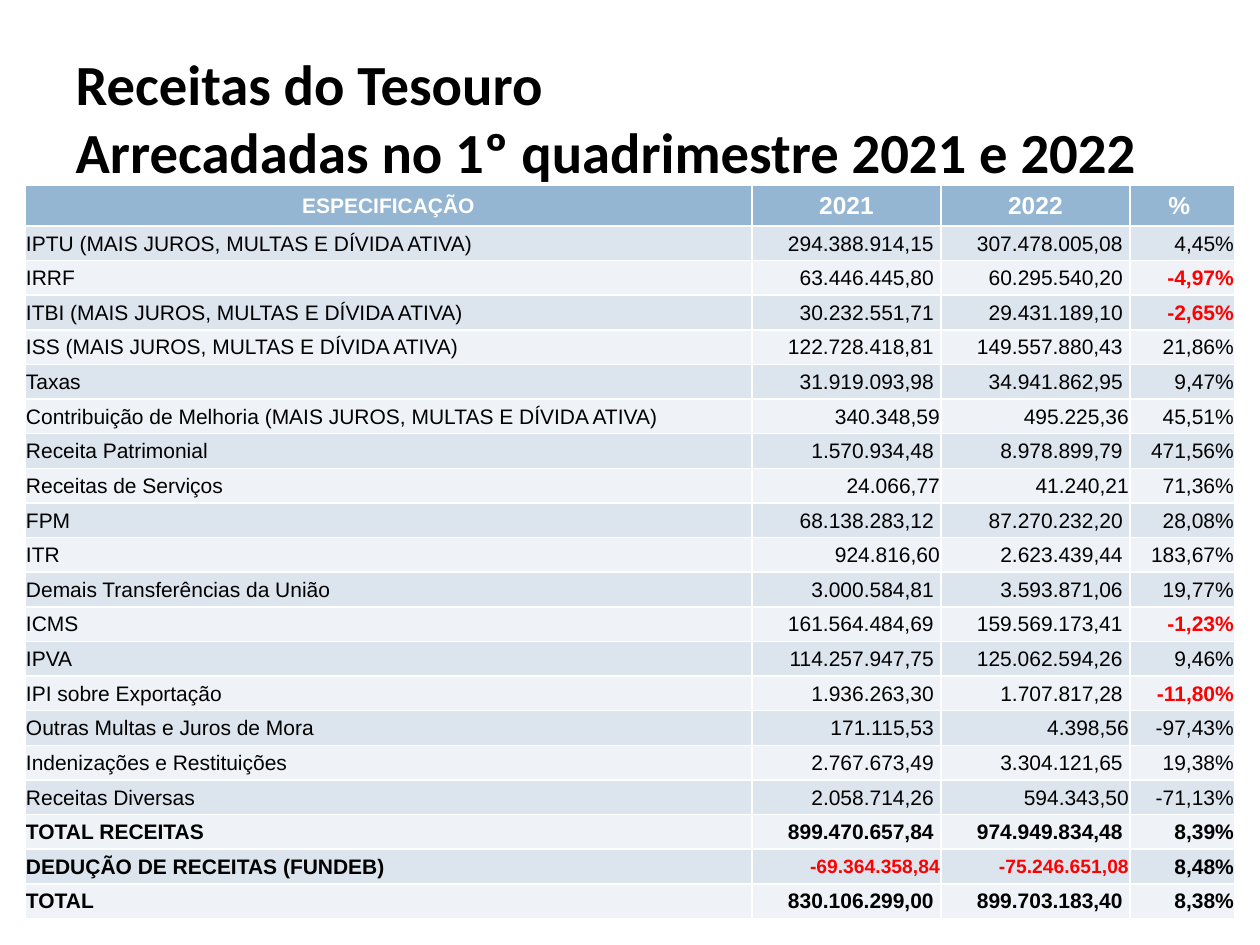
from lxml import etree
from pptx import Presentation
from pptx import util as u
from pptx.dml.color import RGBColor
from pptx.enum import text
from pptx.oxml.ns import qn

TITLE = "Receitas do Tesouro\vArrecadadas no 1º quadrimestre 2021 e 2022"
HEADER = ("ESPECIFICAÇÃO", "2021", "2022", "%")
REVENUES = [
    ("IPTU (MAIS JUROS, MULTAS E DÍVIDA ATIVA)", "294.388.914,15", "307.478.005,08", "4,45%"),
    ("IRRF", "63.446.445,80", "60.295.540,20", "-4,97%"),
    ("ITBI (MAIS JUROS, MULTAS E DÍVIDA ATIVA)", "30.232.551,71", "29.431.189,10", "-2,65%"),
    ("ISS (MAIS JUROS, MULTAS E DÍVIDA ATIVA)", "122.728.418,81", "149.557.880,43", "21,86%"),
    ("Taxas", "31.919.093,98", "34.941.862,95", "9,47%"),
    ("Contribuição de Melhoria (MAIS JUROS, MULTAS E DÍVIDA ATIVA)",
     "340.348,59", "495.225,36", "45,51%"),
    ("Receita Patrimonial", "1.570.934,48", "8.978.899,79", "471,56%"),
    ("Receitas de Serviços", "24.066,77", "41.240,21", "71,36%"),
    ("FPM", "68.138.283,12", "87.270.232,20", "28,08%"),
    ("ITR", "924.816,60", "2.623.439,44", "183,67%"),
    ("Demais Transferências da União", "3.000.584,81", "3.593.871,06", "19,77%"),
    ("ICMS", "161.564.484,69", "159.569.173,41", "-1,23%"),
    ("IPVA", "114.257.947,75", "125.062.594,26", "9,46%"),
    ("IPI sobre Exportação", "1.936.263,30", "1.707.817,28", "-11,80%"),
    ("Outras Multas e Juros de Mora", "171.115,53", "4.398,56", "-97,43%"),
    ("Indenizações e Restituições", "2.767.673,49", "3.304.121,65", "19,38%"),
    ("Receitas Diversas", "2.058.714,26", "594.343,50", "-71,13%"),
]
TOTALS = [
    ("TOTAL RECEITAS", "899.470.657,84", "974.949.834,48", "8,39%"),
    ("DEDUÇÃO DE RECEITAS (FUNDEB)", "-69.364.358,84", "-75.246.651,08", "8,48%"),
    ("TOTAL", "830.106.299,00", "899.703.183,40", "8,38%"),
]
DEDUCTIONS = {"-69.364.358,84", "-75.246.651,08"}
RED_VALUES = DEDUCTIONS | {"-4,97%", "-2,65%", "-1,23%", "-11,80%"}
# Amounts that touch the right edge of their cell
FLUSH_VALUES = DEDUCTIONS | {"340.348,59", "495.225,36", "24.066,77", "41.240,21",
                             "924.816,60", "4.398,56", "594.343,50"}

WHITE = RGBColor(0xFF, 0xFF, 0xFF)
BLACK = RGBColor(0x00, 0x00, 0x00)
RED = RGBColor(0xFF, 0x00, 0x00)
HEADER_BLUE = RGBColor(0x94, 0xB6, 0xD2)
BANDS = (RGBColor(0xEF, 0xF3, 0xF7), RGBColor(0xDC, 0xE5, 0xEE))

PX = u.Inches(1) // 126
COLUMN_WIDTHS = (727, 189, 189, 105)
TABLE_LEFT, TABLE_TOP, TABLE_HEIGHT = 25, 185, 734
HEADER_HEIGHT = 41
NARROW, WIDE = 1, 7


def format_run(run, font_name, size, color, bold):
    run.font.name = font_name
    run.font.size = u.Pt(size)
    run.font.color.rgb = color
    run.font.bold = bold


def set_borders(cell, top, bottom):
    """Give a cell white borders; widths in points."""
    properties = cell._tc.get_or_add_tcPr()
    widths = {"a:lnL": 1, "a:lnR": 1, "a:lnT": top, "a:lnB": bottom}
    for index, (tag, width) in enumerate(widths.items()):
        line = etree.Element(qn(tag), w=str(u.Pt(width)))
        fill = etree.SubElement(line, qn("a:solidFill"))
        etree.SubElement(fill, qn("a:srgbClr"), val=str(WHITE))
        properties.insert(index, line)


def cell_style(row, column, value):
    """Return size, colour, boldness, alignment and right margin."""
    if row == 0:
        size = 12 if column == 0 else 14
        margin = WIDE if column == 3 else NARROW
        return size, WHITE, True, text.PP_ALIGN.CENTER, margin
    size = 11 if value in DEDUCTIONS else 12
    color = RED if value in RED_VALUES else BLACK
    bold = row > len(REVENUES) or value in RED_VALUES
    align = text.PP_ALIGN.LEFT if column == 0 else text.PP_ALIGN.RIGHT
    padded = column in (1, 2) and value not in FLUSH_VALUES
    return size, color, bold, align, WIDE if padded else NARROW


def fill_cell(cell, row, column, value):
    size, color, bold, align, right_margin = cell_style(row, column, value)
    cell.text_frame.text = value
    paragraph = cell.text_frame.paragraphs[0]
    paragraph.alignment = align
    format_run(paragraph.runs[0], "Arial", size, color, bold)
    cell.vertical_anchor = text.MSO_ANCHOR.MIDDLE
    cell.margin_left = cell.margin_top = NARROW * PX
    cell.margin_right, cell.margin_bottom = right_margin * PX, 0
    cell.fill.solid()
    cell.fill.fore_color.rgb = HEADER_BLUE if row == 0 else BANDS[row % 2]
    thick = 1.5 if column < 3 else 1
    set_borders(cell, thick if row == 1 else 1, thick if row == 0 else 1)


presentation = Presentation()
presentation.slide_width, presentation.slide_height = u.Inches(10), u.Inches(7.5)
slide = presentation.slides.add_slide(presentation.slide_layouts[5])

# Title
title = slide.shapes.title
title.left, title.top, title.width, title.height = (n * PX for n in (63, 38, 1134, 158))
title.text_frame.text = TITLE
title.text_frame.auto_size = text.MSO_AUTO_SIZE.NONE
title.text_frame.vertical_anchor = text.MSO_ANCHOR.MIDDLE
heading = title.text_frame.paragraphs[0]
heading.alignment = text.PP_ALIGN.LEFT
for run in heading.runs:
    format_run(run, "Calibri", 32.4, BLACK, True)

# Revenue table
rows = [HEADER, *REVENUES, *TOTALS]
table = slide.shapes.add_table(
    len(rows), len(HEADER), TABLE_LEFT * PX, TABLE_TOP * PX,
    sum(COLUMN_WIDTHS) * PX, TABLE_HEIGHT * PX).table
for column, width in zip(table.columns, COLUMN_WIDTHS):
    column.width = width * PX
body_height = (TABLE_HEIGHT - HEADER_HEIGHT) * PX // (len(rows) - 1)
for row, values in enumerate(rows):
    table.rows[row].height = HEADER_HEIGHT * PX if row == 0 else body_height
    for column, value in enumerate(values):
        fill_cell(table.cell(row, column), row, column, value)

presentation.save("out.pptx")
